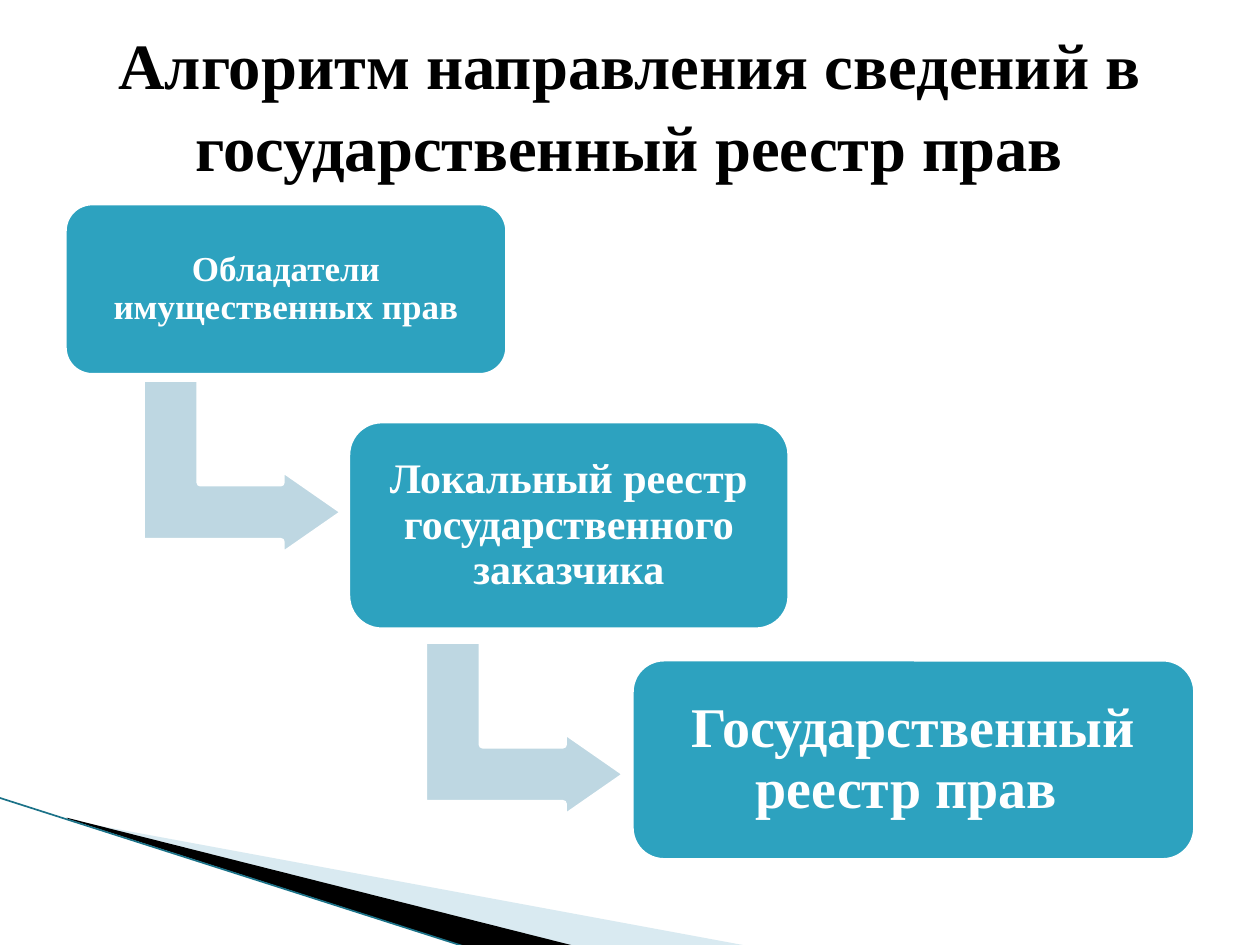
import lxml.etree
import pptx
import pptx.dml.color
import pptx.enum.shapes
import pptx.enum.text
import pptx.oxml.ns
import pptx.util

Inches = pptx.util.Inches
Pt = pptx.util.Pt
Shape = pptx.enum.shapes.MSO_SHAPE

COLORS = {
    "title": "000000",
    "step": "2DA2BF",
    "step_text": "FFFFFF",
    "outline": "FFFFFF",
    "arrow": "BED7E2",
    "pale_wedge": "A0CBDC",
    "dark_wedge": "000000",
    "edge": "1B7288",
}

STEPS = [
    # left, top, width, height, text size, inset, text
    (0.5, 1.6, 3.54, 1.39, 20, 0.08, "Обладатели имущественных прав"),
    (2.75, 3.33, 3.53, 1.68, 24, 0.1, "Локальный реестр государственного заказчика"),
    (5, 5.22, 4.5, 1.62, 32, 0.13, "Государственный реестр прав "),
]
ARROWS = [(1.22, 2.9), (3.46, 4.98)]
PALE_WEDGE = [(0.55, 6.51), (5.95, 7.51), (4.56, 7.51), (0.55, 6.5)]
DARK_WEDGE = [(0.53, 6.49), (4.57, 7.51), (3.72, 7.52), (0.54, 6.5)]


class SlideBuilder:
    font = "Times New Roman"
    outline_width = Pt(4.33)

    def __init__(self, slide):
        self.slide = slide

    def color(self, name):
        return pptx.dml.color.RGBColor.from_string(COLORS[name])

    def paint(self, shape, fill, outline=None):
        shape.shadow.inherit = False
        shape.fill.solid()
        shape.fill.fore_color.rgb = self.color(fill)
        if outline:
            shape.line.color.rgb = self.color(outline)
            shape.line.width = self.outline_width
        else:
            shape.line.fill.background()

    def set_text(self, shape, text, size, color, inset, spacing):
        frame = shape.text_frame
        frame.word_wrap = True
        frame.vertical_anchor = pptx.enum.text.MSO_ANCHOR.MIDDLE
        frame.margin_left = frame.margin_right = Inches(inset)
        frame.margin_top = frame.margin_bottom = Inches(inset)
        para = frame.paragraphs[0]
        para.text = text
        para.alignment = pptx.enum.text.PP_ALIGN.CENTER
        para.line_spacing = spacing
        para.font.name = self.font
        para.font.size = Pt(size)
        para.font.bold = True
        para.font.color.rgb = self.color(color)

    def title(self, left, top, width, height, text):
        box = self.slide.shapes.add_textbox(
            Inches(left), Inches(top), Inches(width), Inches(height))
        self.set_text(box, text, 36.9, "title", 0.05, 1.05)

    def step(self, left, top, width, height, size, inset, text):
        box = self.slide.shapes.add_shape(
            Shape.ROUNDED_RECTANGLE,
            Inches(left), Inches(top), Inches(width), Inches(height))
        self.paint(box, "step", "outline")
        self.set_text(box, text, size, "step_text", inset, 0.9)

    def arrow(self, left, top):
        """Bent arrow turned to lead down and then right."""
        arrow = self.slide.shapes.add_shape(
            Shape.BENT_UP_ARROW,
            Inches(left), Inches(top), Inches(1.42), Inches(1.62))
        arrow.rotation = 90
        for index, value in enumerate((0.33, 0.25, 0.36)):
            arrow.adjustments[index] = value
        self.paint(arrow, "arrow", "outline")

    def wedge(self, points, fill, opacity=100):
        corners = [(Inches(x), Inches(y)) for x, y in points]
        builder = self.slide.shapes.build_freeform(*corners[0])
        builder.add_line_segments(corners[1:])
        wedge = builder.convert_to_shape()
        self.paint(wedge, fill)
        if opacity < 100:
            tint = wedge._element.spPr.find(
                "/".join(map(pptx.oxml.ns.qn, ("a:solidFill", "a:srgbClr"))))
            alpha = lxml.etree.SubElement(tint, pptx.oxml.ns.qn("a:alpha"))
            alpha.set("val", str(opacity * 1000))

    def edge(self, start, end):
        edge = self.slide.shapes.add_connector(
            pptx.enum.shapes.MSO_CONNECTOR.STRAIGHT,
            Inches(start[0]), Inches(start[1]), Inches(end[0]), Inches(end[1]))
        edge.line.color.rgb = self.color("edge")
        edge.line.width = Pt(0.95)
        lxml.etree.SubElement(
            edge._element.spPr, pptx.oxml.ns.qn("a:effectLst"))


def main():
    deck = pptx.Presentation()
    deck.slide_width = Inches(10)
    deck.slide_height = Inches(7.5)
    builder = SlideBuilder(deck.slides.add_slide(deck.slide_layouts[6]))

    builder.wedge(PALE_WEDGE, "pale_wedge", opacity=40)
    builder.wedge(DARK_WEDGE, "dark_wedge")
    builder.edge((-0.01, 6.33), (3.71, 7.52))
    builder.title(0.5, 0.3, 9, 1.03,
                  "Алгоритм направления сведений в государственный реестр прав")
    for arrow in ARROWS:
        builder.arrow(*arrow)
    for step in STEPS:
        builder.step(*step)

    deck.save("out.pptx")


if __name__ == "__main__":
    main()
